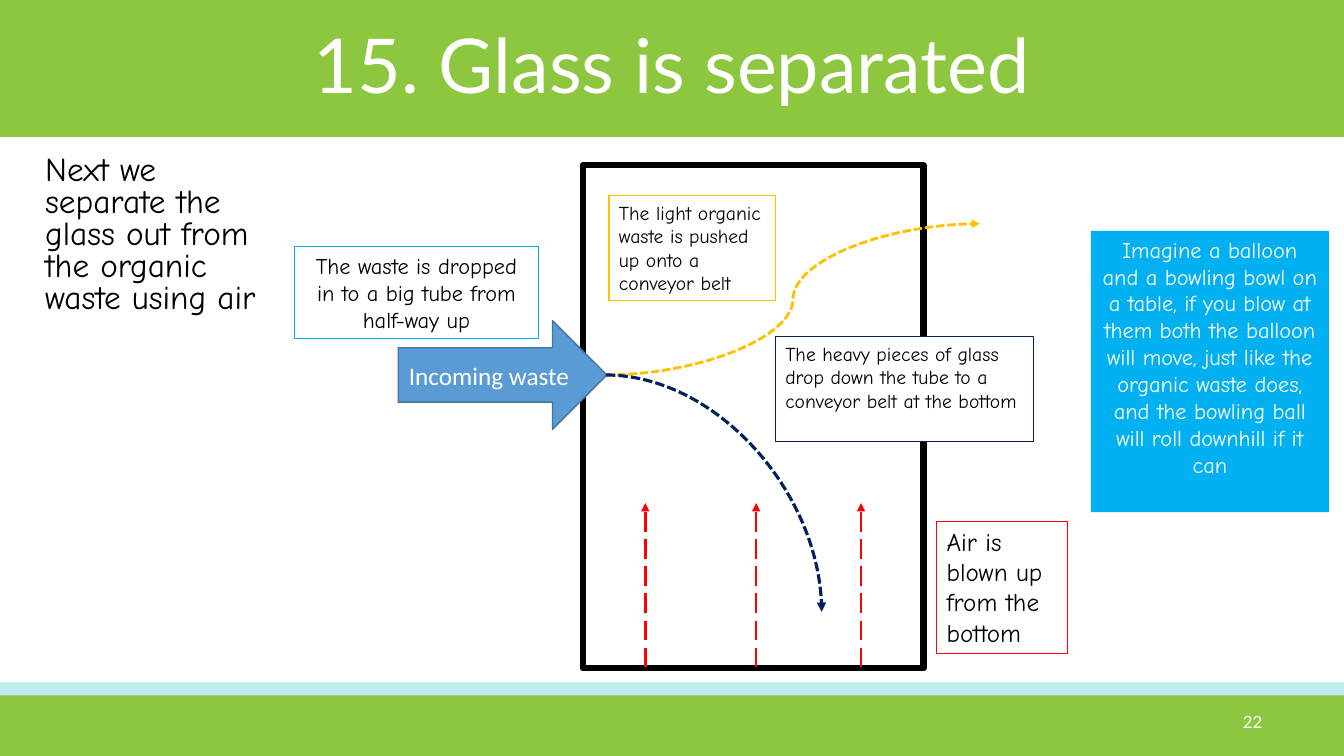
from dataclasses import dataclass
from typing import Optional

from lxml import etree
from pptx import Presentation
from pptx.dml.color import RGBColor
from pptx.enum.dml import MSO_LINE
from pptx.enum.shapes import MSO_CONNECTOR, MSO_SHAPE
from pptx.enum.text import MSO_ANCHOR, MSO_AUTO_SIZE, PP_ALIGN
from pptx.oxml.ns import qn
from pptx.util import Inches, Pt

RECTANGLE, RIGHT_ARROW = MSO_SHAPE.RECTANGLE, MSO_SHAPE.RIGHT_ARROW
STRAIGHT, CURVE = MSO_CONNECTOR.STRAIGHT, MSO_CONNECTOR.CURVE
LONG_DASH, SHORT_DASH = MSO_LINE.LONG_DASH, MSO_LINE.SQUARE_DOT
LEFT, CENTER, RIGHT = PP_ALIGN.LEFT, PP_ALIGN.CENTER, PP_ALIGN.RIGHT
TOP, MIDDLE = MSO_ANCHOR.TOP, MSO_ANCHOR.MIDDLE
FIXED_SIZE = MSO_AUTO_SIZE.NONE

GREEN, WHITE, BLACK = "8DC63F", "FFFFFF", "000000"
SKY, RED, AMBER, NAVY = "00B0F0", "FF0000", "FFC000", "002060"
LATO, COMIC = "Lato", "Comic Neue"


@dataclass
class Label:
    text: str
    size: float
    font: str = COMIC
    color: str = BLACK
    align: PP_ALIGN = LEFT
    anchor: MSO_ANCHOR = TOP
    spacing: float = 1.0


@dataclass
class Block:
    at: tuple[float, float, float, float]
    fill: Optional[str] = None
    line: Optional[str] = None
    weight: float = 0.75
    label: Optional[Label] = None
    kind: MSO_SHAPE = RECTANGLE


@dataclass
class Flow:
    start: tuple[float, float]
    end: tuple[float, float]
    color: str
    weight: float
    dash: MSO_LINE = SHORT_DASH
    kind: MSO_CONNECTOR = CURVE
    preset: Optional[str] = None


def rgb(color: str) -> RGBColor:
    return RGBColor.from_string(color)


def place(shape, at) -> None:
    for side, value in zip(("left", "top", "width", "height"), at):
        setattr(shape, side, Inches(value))


def write(shape, label: Label) -> None:
    frame = shape.text_frame
    settings = {"word_wrap": True, "auto_size": FIXED_SIZE, "vertical_anchor": label.anchor}
    for name, value in settings.items():
        setattr(frame, name, value)
    para = frame.paragraphs[0]
    para.alignment, para.line_spacing = label.align, label.spacing
    para.space_before = Pt(0)
    span = para.add_run()
    span.text = label.text
    for name, value in {"name": label.font, "size": Pt(label.size), "bold": False}.items():
        setattr(span.font, name, value)
    span.font.color.rgb = rgb(label.color)


def draw_block(page, block: Block):
    shape = page.shapes.add_shape(block.kind, *map(Inches, block.at))
    shape.shadow.inherit = False
    if block.fill:
        shape.fill.solid()
        shape.fill.fore_color.rgb = rgb(block.fill)
    else:
        shape.fill.background()
    if block.line:
        shape.line.color.rgb = rgb(block.line)
        shape.line.width = Pt(block.weight)
    else:
        shape.line.fill.background()
    if block.label:
        write(shape, block.label)
    return shape


def draw_text(page, at, label: Label) -> None:
    write(page.shapes.add_textbox(*map(Inches, at)), label)


def draw_flow(page, flow: Flow) -> None:
    connector = page.shapes.add_connector(flow.kind, *map(Inches, flow.start + flow.end))
    connector.line.color.rgb = rgb(flow.color)
    connector.line.width = Pt(flow.weight)
    connector.line.dash_style = flow.dash
    properties = connector._element.spPr
    etree.SubElement(properties.find(qn("a:ln")), qn("a:tailEnd"), type="triangle")
    etree.SubElement(properties, qn("a:effectLst"))
    if flow.preset:
        properties.find(qn("a:prstGeom")).set("prst", flow.preset)


def draw_frame(page) -> None:
    # Coloured bands
    pale_band = draw_block(page, Block((0, 6.77, 13.33, 0.24), "20BFD0"))
    tint = pale_band._element.spPr.find(qn("a:solidFill"))[0]
    etree.SubElement(tint, qn("a:alpha"), val="29000")
    header = (0, 0, 13.33, 1.36)
    for at in (header, (0, 6.9, 13.33, 0.6)):
        draw_block(page, Block(at, GREEN))

    # Title, raised above its band
    title = page.shapes.title
    title.element.getparent().append(title.element)
    place(title, header)
    write(title, Label("15. Glass is separated", 54, LATO, WHITE, CENTER, MIDDLE, 0.9))

    # Introduction and page number
    draw_text(page, (0.35, 1.5, 2.47, 2.18), Label(
        "Next we separate the glass out from the organic waste using air", 23.8, spacing=0.8))
    draw_text(page, (9.62, 6.96, 3, 0.4), Label("22", 12, LATO, WHITE, RIGHT, MIDDLE))


def draw_diagram(page) -> None:
    # Analogy panel and tube
    draw_block(page, Block((10.82, 2.29, 2.36, 2.79), SKY, label=Label(
        "Imagine a balloon and a bowling bowl on a table, if you blow at them both "
        "the balloon will move, just like the organic waste does, and the bowling "
        "ball will roll downhill if it can", 16, color=WHITE, align=CENTER)))
    draw_block(page, Block((5.78, 1.64, 3.38, 4.99), line=BLACK, weight=4.5))

    # Rising air
    for x in (6.4, 7.5, 8.54):
        draw_flow(page, Flow((x, 6.62), (x, 4.99), RED, 1.75, LONG_DASH, STRAIGHT))

    # Incoming waste and the two ways it leaves
    draw_block(page, Block((3.95, 3.18, 2.07, 1.08), "5B9BD5", "43739E", 1, Label(
        "Incoming waste", 18, "Calibri", WHITE, CENTER, MIDDLE), RIGHT_ARROW))
    inlet = (6.01, 3.72)
    draw_flow(page, Flow(inlet, (9.72, 2.22), AMBER, 2))
    draw_flow(page, Flow(inlet, (8.15, 6.07), NAVY, 2.25, preset="curvedConnector2"))

    # Captions
    captions = [
        Block((2.92, 2.45, 2.42, 0.91), line=SKY, label=Label(
            "The waste is dropped in to a big tube from half-way up", 16, align=CENTER)),
        Block((9.29, 5.17, 1.3, 1.31), line=RED, label=Label(
            "Air is blown up from the bottom", 18)),
        Block((6.04, 1.94, 1.65, 1.04), WHITE, AMBER, label=Label(
            "The light organic waste is pushed up onto a conveyor belt", 14)),
        Block((7.69, 3.34, 2.56, 1.04), WHITE, NAVY, label=Label(
            "The heavy pieces of glass drop down the tube to a conveyor belt at the bottom", 14)),
    ]
    for caption in captions:
        draw_block(page, caption)


def main() -> None:
    deck = Presentation()
    deck.slide_width, deck.slide_height = Inches(13.33), Inches(7.5)
    page = deck.slides.add_slide(deck.slide_layouts.get_by_name("Title Only"))
    draw_frame(page)
    draw_diagram(page)
    deck.save("out.pptx")


if __name__ == "__main__":
    main()
